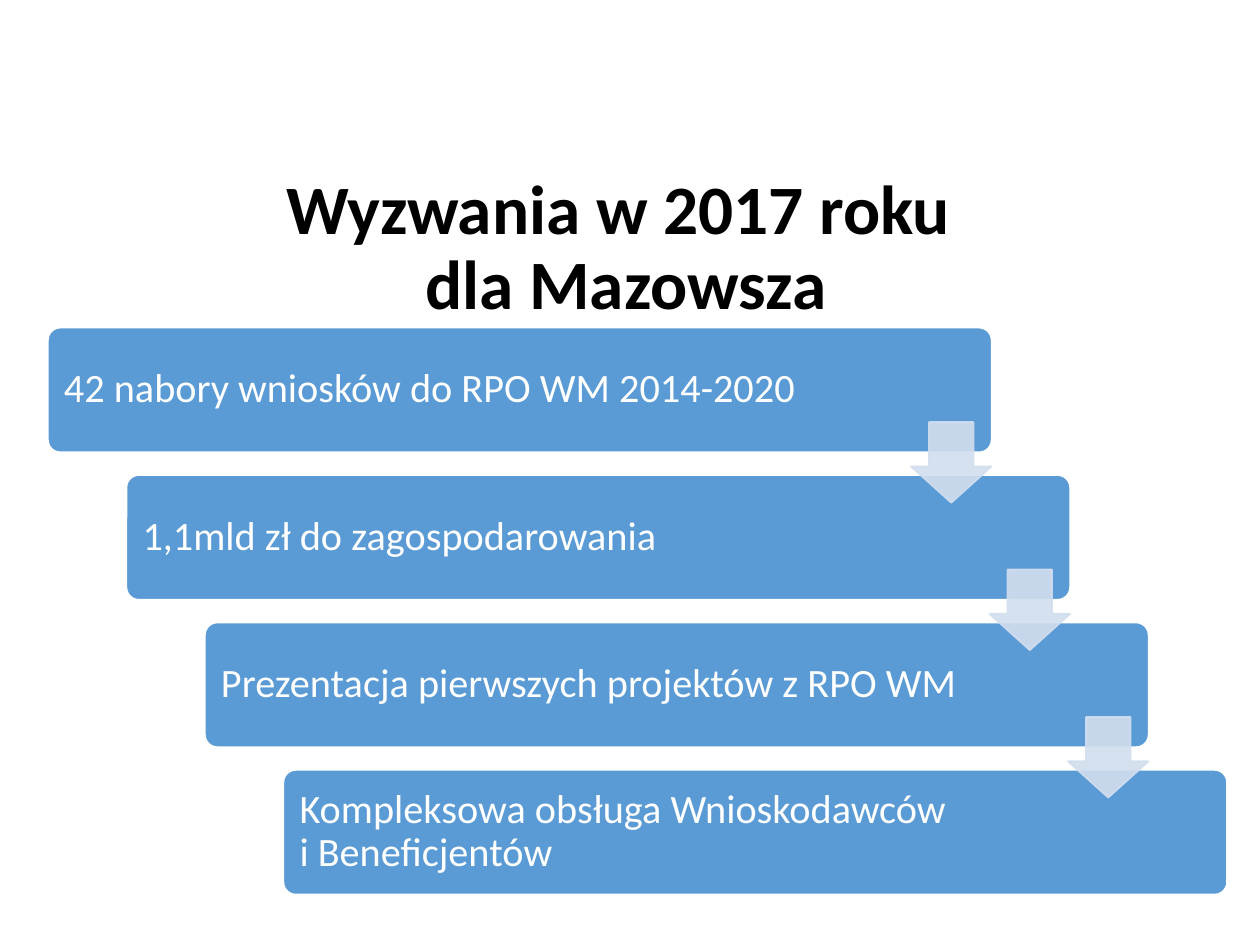
from dataclasses import dataclass

from pptx import Presentation, util as u
from pptx.dml.color import RGBColor
from pptx.enum import shapes, text
from pptx.oxml.ns import qn
from lxml import etree

FONT = "Calibri"
BLUE, PALE, WHITE, BLACK = "5B9BD5", "D2DEEF", "FFFFFF", "000000"
LEFT, TOP = 0.38, 2.6
STEP_X, STEP_Y = 0.623, 1.17
BAR_W, BAR_H, ARROW = 7.49, 0.99, 0.64


@dataclass
class Step:
    lines: list[str]
    text_width: float


STEPS = [
    Step(["42 nabory wniosków do RPO WM 2014-2020"], 6.34),
    Step(["1,1mld zł do zagospodarowania"], 6.16),
    Step(["Prezentacja pierwszych projektów z RPO WM"], 6.17),
    Step(["Kompleksowa obsługa Wnioskodawców ", "i Beneficjentów"], 6.16),
]


def rgb(color: str) -> RGBColor:
    return RGBColor.from_string(color)


def box(x: float, y: float, w: float, h: float) -> tuple:
    return u.Inches(x), u.Inches(y), u.Inches(w), u.Inches(h)


def write(tf, lines: list[str], size: float, color: str, align, bold: bool = False) -> None:
    """Write one paragraph with line breaks between its lines."""
    tf.word_wrap = True
    tf.auto_size = text.MSO_AUTO_SIZE.NONE
    tf.vertical_anchor = text.MSO_ANCHOR.MIDDLE
    p = tf.paragraphs[0]
    p.alignment = align
    p.line_spacing = 0.9
    p.space_before = u.Pt(0)
    for i, line in enumerate(lines):
        if i:
            p.add_line_break()
        r = p.add_run()
        r.text = line
        r.font.name = FONT
        r.font.size = u.Pt(size)
        r.font.bold = bold
        r.font.color.rgb = rgb(color)


def add_block(slide, kind, place: tuple, adjustments: list[float], fill: str, line: str):
    sp = slide.shapes.add_shape(kind, *place)
    sp.shadow.inherit = False
    for i, value in enumerate(adjustments):
        sp.adjustments[i] = value
    sp.fill.solid()
    sp.fill.fore_color.rgb = rgb(fill)
    sp.line.color.rgb = rgb(line)
    sp.line.width = u.Pt(1)
    return sp


def add_step(slide, step: Step, x: float, y: float) -> None:
    add_block(slide, shapes.MSO_SHAPE.ROUNDED_RECTANGLE, box(x, y, BAR_W, BAR_H),
              [0.1], BLUE, WHITE)
    label = slide.shapes.add_textbox(*box(x + 0.03, y + 0.03, step.text_width, BAR_H - 0.06))
    tf = label.text_frame
    tf.margin_left = tf.margin_right = tf.margin_top = tf.margin_bottom = u.Inches(0.1)
    write(tf, step.lines, 23, WHITE, text.PP_ALIGN.LEFT)


def add_arrow(slide, x: float, y: float) -> None:
    sp = add_block(slide, shapes.MSO_SHAPE.DOWN_ARROW, box(x, y, ARROW, ARROW),
                   [0.55, 0.45], PALE, PALE)
    # Fill and outline are 90% opaque
    for color in sp.element.spPr.iter(qn("a:srgbClr")):
        etree.SubElement(color, qn("a:alpha")).set("val", "90000")


def main() -> None:
    prs = Presentation()
    prs.slide_width, prs.slide_height = u.Inches(10), u.Inches(7.5)
    slide = prs.slides.add_slide(prs.slide_layouts[5])

    # Title
    title = slide.shapes.title
    title.left, title.top, title.width, title.height = box(0.66, 1.47, 8.62, 1.02)
    write(title.text_frame, ["Wyzwania w 2017 roku ", "dla Mazowsza"], 39.6, BLACK,
          text.PP_ALIGN.CENTER, bold=True)

    # Staircase of steps
    for i, step in enumerate(STEPS):
        add_step(slide, step, LEFT + i * STEP_X, TOP + i * STEP_Y)

    # Arrows from each step to the next
    for i in range(len(STEPS) - 1):
        add_arrow(slide, LEFT + BAR_W - ARROW + i * STEP_X, TOP + 0.75 + i * STEP_Y)

    prs.save("out.pptx")


if __name__ == "__main__":
    main()
